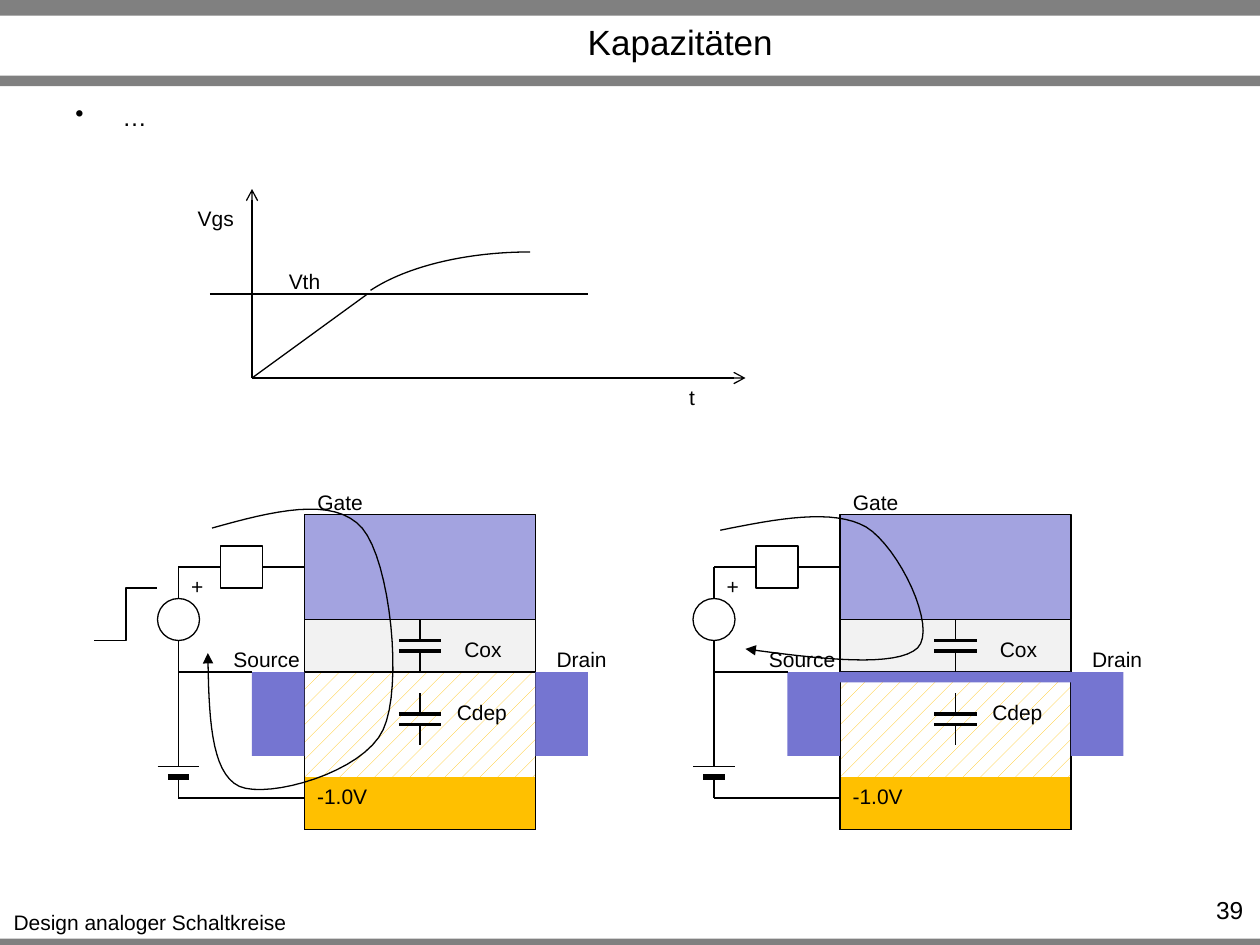
"""Slide on MOS capacitances: a Vgs curve above two transistor cross sections."""
from lxml import etree
from pptx import Presentation
from pptx.dml.color import RGBColor
from pptx.enum.dml import MSO_PATTERN
from pptx.enum.shapes import MSO_CONNECTOR, MSO_SHAPE
from pptx.enum.text import MSO_ANCHOR, MSO_AUTO_SIZE, PP_ALIGN
from pptx.oxml.ns import qn
from pptx.util import Cm, Pt

STRAIGHT, ELBOW = MSO_CONNECTOR.STRAIGHT, MSO_CONNECTOR.ELBOW
RECT, PROCESS = MSO_SHAPE.RECTANGLE, MSO_SHAPE.FLOWCHART_PROCESS
OVAL, ARC = MSO_SHAPE.OVAL, MSO_SHAPE.ARC
LEFT, CENTER, RIGHT = PP_ALIGN.LEFT, PP_ALIGN.CENTER, PP_ALIGN.RIGHT
MIDDLE, FIT, PERCENT_5 = MSO_ANCHOR.MIDDLE, MSO_AUTO_SIZE.SHAPE_TO_FIT_TEXT, MSO_PATTERN.PERCENT_5

BLACK = RGBColor(0x00, 0x00, 0x00)
WHITE = RGBColor(0xFF, 0xFF, 0xFF)
GRAY = RGBColor(0x80, 0x80, 0x80)
BULK = RGBColor(0xFF, 0xC0, 0x00)
OXIDE = RGBColor(0xF2, 0xF2, 0xF2)
GATE = RGBColor(0xA3, 0xA3, 0xE0)
DIFFUSION = RGBColor(0x75, 0x75, 0xD1)

GRID = 2.54 / 12
LABEL_HEIGHT = 3.6
THIN, PLATE, BATTERY = 0.75, 2, 3.5

BARS = [(0, 89.4, 120, 1), (0, 0, 120, 1.5), (0, 7.2, 120, 1)]
FOOTER = ("Design analoger Schaltkreise", 0, 86, 28.6)
TITLE = ("Kapazitäten", 15.6, 1.7, 98.4, 4.5)
BODY = ("…", 6, 9.1, 108, 5.9)
PAGE_NUMBER = ("39", 109.2, 84.7, 10.4, 2.9)

DEVICE_LEFTS = {"inverted": 80, "depleted": 29}
LAYERS = [
    (PROCESS, 64, 15, BULK, BLACK),
    (PROCESS, 64, 10, "depletion", None),
    (PROCESS, 59, 5, OXIDE, BLACK),
    (RECT, 49, 10, GATE, BLACK),
    (PROCESS, 64, 15, None, BLACK),
]
CHANNEL_WIDTH = 22
DIFFUSION_LEFTS = [-5, CHANNEL_WIDTH]
CAPACITOR_TOPS = [59, 66]
CAPACITOR = [(11, 0, 11, 2, THIN), (9, 2, 13, 2, PLATE),
             (9, 3, 13, 3, PLATE), (11, 3, 11, 5, THIN)]
BATTERY_LINES = [(-14, 73, -10, 73, THIN), (-13, 74, -11, 74, BATTERY),
                 (-12, 73, -12, 71, THIN), (-12, 76, -12, 74, THIN)]
WIRES = [(-12, 64, -5, 64), (-12, 71, -12, 64), (-12, 76, 0, 76),
         (-12, 61, -12, 64), (-12, 54, -12, 57), (0, 54, -12, 54)]
DEVICE_LABELS = [
    ("-1.0V", 0, 74, 7.2), ("Cox", 14, 60, 6), ("Cdep", 13.3, 66, 7.2),
    ("+", -12, 54, 3.6), ("Gate", 0, 46, 6.8), ("Source", -8, 61, 8.8),
    ("Drain", 22.8, 61, 7.2),
]
CURRENT_LOOPS = [
    [(20.2, 50.3), (25.9, 48.7), (31.8, 47.2), (34.5, 50.3), (37.2, 53.5),
     (38.4, 65.4), (36.5, 69.5), (34.6, 73.6), (25.6, 76.1), (22.8, 74.9),
     (20, 73.6), (19.9, 67.9), (19.8, 62.2)],
    [(68.6, 50.5), (74, 49.4), (79.4, 48.4), (82.5, 50.2), (85.6, 52.1),
     (89.3, 59.8), (87.4, 61.7), (85.4, 63.6), (78.2, 62.8), (71, 61.8)],
]
AXES = [(24, 36, 71, 36), (24, 36, 24, 18)]
GRAPH_LINES = [(24, 36, 35, 28), (20, 28, 56, 28)]
SATURATION = (32, 24, 37, 17)
GRAPH_LABELS = [("Vgs", 17.6, 19, 5.9), ("t", 64.4, 36, 3), ("Vth", 26.3, 25, 5.4)]
STEP = (9, 61, 15, 56)


def grid(*values):
    return [Cm(value * GRID) for value in values]


def add_arrowhead(shape, kind):
    etree.SubElement(shape._element.spPr.find(qn("a:ln")), qn("a:tailEnd"), type=kind)


def style_outline(shape, color, width=THIN):
    if color is None:
        shape.line.fill.background()
    else:
        shape.line.color.rgb = color
        shape.line.width = Pt(width)


def add_block(shapes, kind, box, fill=None, outline=None):
    block = shapes.add_shape(kind, *grid(*box))
    block.shadow.inherit = False
    if fill is None:
        block.fill.background()
    elif fill == "depletion":
        block.fill.patterned()
        block.fill.pattern = PERCENT_5
        block.fill.fore_color.rgb = BULK
        block.fill.back_color.rgb = WHITE
    else:
        block.fill.solid()
        block.fill.fore_color.rgb = fill
    style_outline(block, outline)
    return block


def add_line(shapes, ends, width=THIN, kind=STRAIGHT, arrow=None):
    line = shapes.add_connector(kind, *grid(*ends))
    style_outline(line, BLACK, width)
    etree.SubElement(line._element.spPr, qn("a:effectLst"))
    if arrow:
        add_arrowhead(line, arrow)


def add_text(shapes, text, left, top, width, height, size, align):
    box = shapes.add_textbox(*grid(left, top, width, height))
    box.text_frame.word_wrap = True
    paragraph = box.text_frame.paragraphs[0]
    paragraph.text = text
    paragraph.alignment = align
    paragraph.font.size = Pt(size)
    paragraph.font.name = "Arial"
    paragraph.font.color.rgb = BLACK
    return box.text_frame


def add_label(shapes, text, left, top, width):
    frame = add_text(shapes, text, left, top, width, LABEL_HEIGHT, 12, CENTER)
    frame.word_wrap = False
    frame.auto_size = FIT


def add_symbol(shapes, lines, dx, dy=0):
    symbol = shapes.add_group_shape()
    for x1, y1, x2, y2, width in lines:
        add_line(symbol.shapes, (x1 + dx, y1 + dy, x2 + dx, y2 + dy), width)


def add_device(shapes, left, inverted):
    for kind, top, height, fill, outline in LAYERS:
        add_block(shapes, kind, (left, top, CHANNEL_WIDTH, height), fill, outline)
    if inverted:
        add_block(shapes, RECT, (left, 64, CHANNEL_WIDTH, 1), DIFFUSION)
    for dx in DIFFUSION_LEFTS:
        add_block(shapes, RECT, (left + dx, 64, 5, 8), DIFFUSION)
    for top in CAPACITOR_TOPS:
        add_symbol(shapes, CAPACITOR, left, top)
    add_symbol(shapes, BATTERY_LINES, left)
    for x1, y1, x2, y2 in WIRES:
        add_line(shapes, (left + x1, y1, left + x2, y2))
    add_block(shapes, OVAL, (left - 14, 57, 4, 4), None, BLACK)
    for text, dx, top, width in DEVICE_LABELS:
        add_label(shapes, text, left + dx, top, width)
    add_block(shapes, RECT, (left - 8, 52, 4, 4), WHITE, BLACK)


def bezier_points(controls, steps=16):
    for first in range(0, len(controls) - 1, 3):
        for step in range(1, steps + 1):
            t = step / steps
            weights = ((1 - t) ** 3, 3 * t * (1 - t) ** 2, 3 * t * t * (1 - t), t ** 3)
            section = list(zip(weights, controls[first:first + 4]))
            yield grid(*(sum(w * point[axis] for w, point in section) for axis in (0, 1)))


def add_current_loop(shapes, controls):
    builder = shapes.build_freeform(*grid(*controls[0]))
    builder.add_line_segments(list(bezier_points(controls)), close=False)
    loop = builder.convert_to_shape()
    loop.shadow.inherit = False
    loop.fill.background()
    style_outline(loop, BLACK)
    add_arrowhead(loop, "triangle")


def main():
    deck = Presentation()
    deck.slide_width, deck.slide_height = Cm(25.4), Cm(19.05)
    shapes = deck.slides.add_slide(deck.slide_layouts[6]).shapes

    for bar in BARS:
        add_block(shapes, RECT, bar, GRAY)
    add_label(shapes, *FOOTER)
    add_text(shapes, *TITLE, 20, CENTER).vertical_anchor = MIDDLE
    body = add_text(shapes, *BODY, 14, LEFT).paragraphs[0]
    bullet = body._p.get_or_add_pPr()
    bullet.set("marL", str(Cm(0.95)))
    bullet.set("indent", str(Cm(-0.95)))
    bullet.insert(0, etree.Element(qn("a:buChar"), char="•"))
    add_text(shapes, *PAGE_NUMBER, 14, RIGHT)

    for state, left in DEVICE_LEFTS.items():
        add_device(shapes, left, state == "inverted")
    for controls in CURRENT_LOOPS:
        add_current_loop(shapes, controls)

    for axis in AXES:
        add_line(shapes, axis, arrow="arrow")
    for ends in GRAPH_LINES:
        add_line(shapes, ends)
    saturation = add_block(shapes, ARC, SATURATION, None, BLACK)
    saturation.adjustments[0], saturation.adjustments[1] = 118.6, 162
    for label in GRAPH_LABELS:
        add_label(shapes, *label)
    add_line(shapes, STEP, kind=ELBOW)
    deck.save("out.pptx")


if __name__ == "__main__":
    main()
